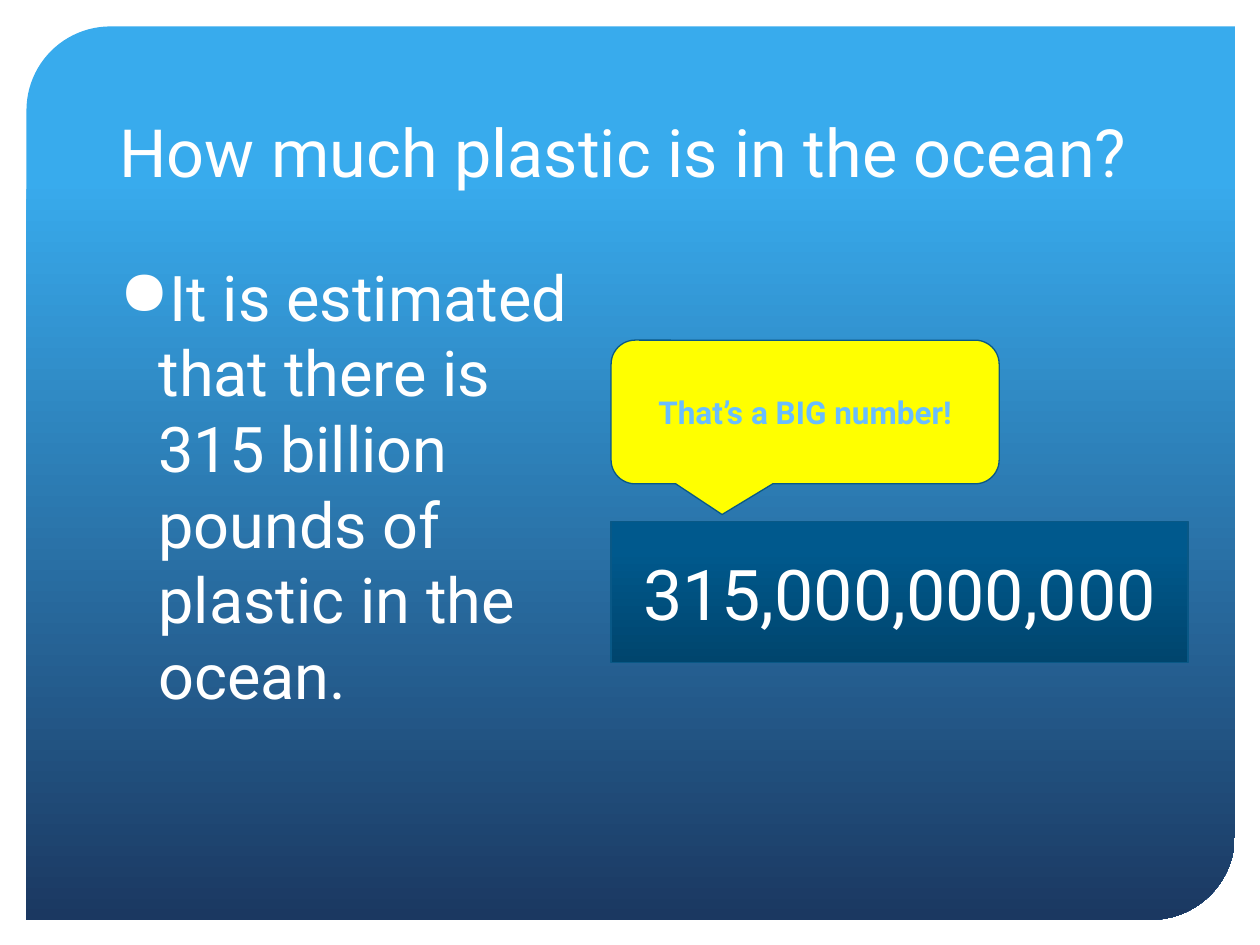
from pptx import Presentation
from pptx.dml.color import RGBColor
from pptx.enum.shapes import MSO_SHAPE
from pptx.enum.text import MSO_ANCHOR, PP_ALIGN
from pptx.oxml import parse_xml
from pptx.oxml.ns import nsdecls, qn
from pptx.util import Inches, Pt

COLORS = {
    "white": "FFFFFF", "sky": "38ABED", "navy": "1B3861",
    "deep": "00456D", "sea": "00598D", "lagoon": "005A8E",
    "edge": "095886", "yellow": "FFFF00", "pale": "69BDFF",
}

deck = Presentation()
deck.slide_width, deck.slide_height = Inches(10), Inches(7.5)
slide = deck.slides.add_slide(deck.slide_layouts[6])
column, row = deck.slide_width / 100, deck.slide_height / 75


def add_block(preset, left, top, width, height, adjustments=(), stops=(), angle=0, edge=None):
    box = (round(left * column), round(top * row), round(width * column), round(height * row))
    if preset is None:
        return slide.shapes.add_textbox(*box)
    block = slide.shapes.add_shape(preset, *box)
    block.shadow.inherit = False
    for index, value in enumerate(adjustments):
        block.adjustments[index] = value
    if len(stops) == 1:
        block.fill.solid()
        block.fill.fore_color.rgb = RGBColor.from_string(COLORS[stops[0][1]])
    else:
        marks = "".join(
            f'<a:gs pos="{share * 1000}"><a:srgbClr val="{COLORS[name]}"/></a:gs>'
            for share, name in stops
        )
        block._element.spPr.find(qn("a:prstGeom")).addnext(parse_xml(
            f'<a:gradFill {nsdecls("a")} rotWithShape="1"><a:gsLst>{marks}</a:gsLst>'
            f'<a:lin ang="{angle * 60000}" scaled="0"/></a:gradFill>'
        ))
    if edge:
        block.line.color.rgb = RGBColor.from_string(COLORS[edge])
        block.line.width = Pt(0.75)
    else:
        block.line.fill.background()
    return block


def write(block, words, color, anchor, align, font, bullet=None):
    frame = block.text_frame
    frame.word_wrap = True
    frame.vertical_anchor = anchor
    paragraph = frame.paragraphs[0]
    paragraph.alignment = align
    if bullet:
        properties = paragraph._p.get_or_add_pPr()
        indent = Inches(0.31)
        properties.set("marL", str(indent))
        properties.set("indent", str(-indent))
        properties.append(parse_xml(f'<a:buChar {nsdecls("a")} char="{bullet}"/>'))
    run = paragraph.add_run()
    run.text = words
    run.font.color.rgb = RGBColor.from_string(COLORS[color])
    for name, value in {"name": "Roboto", **font}.items():
        setattr(run.font, name, value)


add_block(MSO_SHAPE.ROUND_2_DIAG_RECTANGLE, 2.1, 2.1, 95.9, 70.9,
          (0.094, 0), ((17, "sky"), (100, "navy")), 90)

question = add_block(None, 8.5, 4.2, 82.9, 11.4)
write(question, "How much plastic is in the ocean?", "white",
      MSO_ANCHOR.BOTTOM, PP_ALIGN.LEFT, {"size": Pt(38)})

estimate = add_block(None, 8.5, 20, 40, 46.1)
write(estimate, "It is estimated that there is 315 billion pounds of plastic in the ocean.",
      "white", MSO_ANCHOR.TOP, PP_ALIGN.LEFT, {"size": Pt(36)}, "●")

number = add_block(MSO_SHAPE.RECTANGLE, 48.5, 41.4, 45.8, 11.2, (),
                   ((0, "deep"), (80, "sea"), (100, "lagoon")), 270, "edge")
write(number, "315,000,000,000", "white",
      MSO_ANCHOR.MIDDLE, PP_ALIGN.CENTER, {"size": Pt(40)})

remark = add_block(MSO_SHAPE.ROUNDED_RECTANGULAR_CALLOUT, 48.5, 27, 30.8, 11.4,
                   (-0.214, 0.714, 0.167), ((0, "yellow"),), 0, "edge")
write(remark, "That’s a BIG number!", "pale",
      MSO_ANCHOR.MIDDLE, PP_ALIGN.CENTER, {"size": Pt(18), "bold": True})

deck.save("out.pptx")
